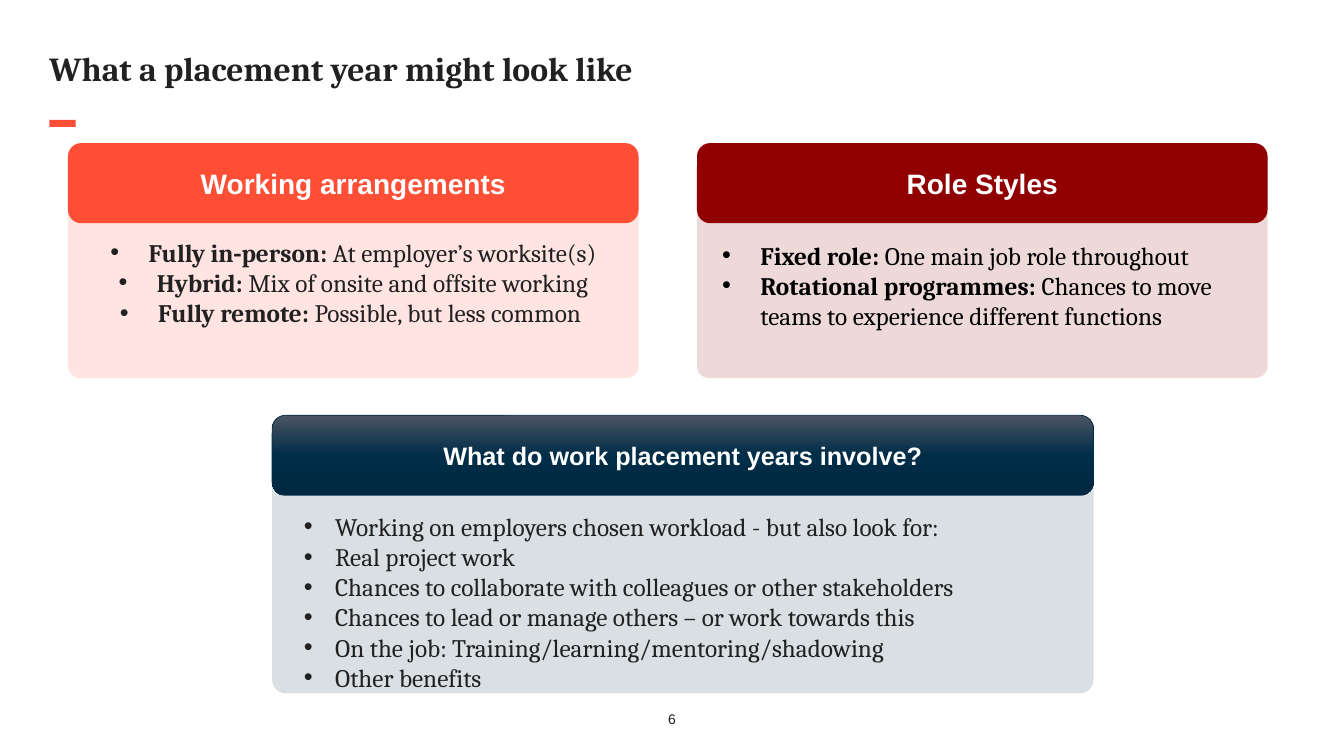
from dataclasses import dataclass

from lxml import etree
from pptx import Presentation
from pptx.dml.color import RGBColor
from pptx.enum.shapes import MSO_SHAPE
from pptx.enum.text import MSO_ANCHOR, MSO_AUTO_SIZE, PP_ALIGN
from pptx.oxml.ns import qn
from pptx.util import Inches, Pt

RECTANGLE, ROUNDED = MSO_SHAPE.RECTANGLE, MSO_SHAPE.ROUNDED_RECTANGLE
LEFT, CENTER = PP_ALIGN.LEFT, PP_ALIGN.CENTER
TOP, MIDDLE = MSO_ANCHOR.TOP, MSO_ANCHOR.MIDDLE
GROW = MSO_AUTO_SIZE.SHAPE_TO_FIT_TEXT


@dataclass(frozen=True)
class Theme:
    ink: str = "212121"
    black: str = "000000"
    white: str = "FFFFFF"
    coral: str = "FF4E36"
    maroon: str = "910000"
    navy: str = "032C45"
    navy_gradient: tuple = ((0, "4B5462"), (50, "002D48"), (100, "002840"))
    tint: int = 15
    serif: str = "Cambria"
    sans: str = "Arial"
    title: int = 24
    heading: int = 20
    body: int = 18
    small: int = 10


THEME = Theme()

# Content: each item is (bold lead, plain text); lengths are percent of the slide
TITLE = "What a placement year might look like"
PAGE_NUMBER = "6"
TITLE_AREA = (3.68, 2.27, 92.78, 14.27)
ACCENT_AREA = (3.68, 15.87, 1.95, 0.93)
PAGE_AREA = (46.43, 93.33, 7.13, 3.47)
HEADER_HEIGHT = 10.6
CARDS = [
    {
        "heading": "Working arrangements", "size": THEME.heading,
        "color": THEME.coral, "ink": THEME.ink, "gradient": None,
        "area": (5.06, 18.93, 42.45, 31.07),
        "side": 1.01, "gap": 1.14, "text_height": 17.47,
        "indent": 0.38, "align": CENTER,
        "items": [
            ("Fully in‑person: ", "At employer’s worksite(s)"),
            ("Hybrid: ", "Mix of onsite and offsite working"),
            ("Fully remote: ", "Possible, but less common "),
        ],
    },
    {
        "heading": "Role Styles", "size": THEME.heading,
        "color": THEME.maroon, "ink": THEME.black, "gradient": None,
        "area": (51.86, 18.93, 42.45, 31.07),
        "side": 1.13, "gap": 1.54, "text_height": 17.47,
        "indent": 0.38, "align": LEFT,
        "items": [
            ("Fixed role: ", "One main job role throughout"),
            ("Rotational programmes: ",
             "Chances to move teams to experience different functions"),
        ],
    },
    {
        "heading": "What do work placement years involve?", "size": THEME.body,
        "color": THEME.navy, "ink": THEME.ink, "gradient": THEME.navy_gradient,
        "area": (20.25, 54.93, 61.12, 36.8),
        "side": 1.63, "gap": 1.4, "text_height": 25.6,
        "indent": 0.31, "align": LEFT,
        "items": [
            ("", "Working on employers chosen workload - but also look for:"),
            ("", "Real project work"),
            ("", "Chances to collaborate with colleagues or other stakeholders"),
            ("", "Chances to lead or manage others – or work towards this"),
            ("", "On the job: Training/learning/mentoring/shadowing"),
            ("", "Other benefits"),
        ],
    },
]

presentation = Presentation()
presentation.slide_width, presentation.slide_height = Inches(13.33), Inches(7.5)
slide = presentation.slides.add_slide(presentation.slide_layouts[6])


def place(area):
    """Turn percent of the slide into lengths."""
    sides = (presentation.slide_width, presentation.slide_height) * 2
    return [int(side * share / 100) for side, share in zip(sides, area)]


def add_block(preset, area, color, alpha=None, radius=None):
    shape = slide.shapes.add_shape(preset, *place(area))
    shape.shadow.inherit = False
    shape.line.fill.background()
    shape.fill.solid()
    shape.fill.fore_color.rgb = RGBColor.from_string(color)
    if alpha is not None:
        color_element = shape.fill._xPr.find(".//" + qn("a:srgbClr"))
        etree.SubElement(color_element, qn("a:alpha"), val=str(alpha * 1000))
    if radius is not None:
        shape.adjustments[0] = radius
    return shape


def add_gradient(shape, stops):
    """Replace the solid fill with a top-to-bottom gradient."""
    solid = shape._element.spPr.find(qn("a:solidFill"))
    gradient = etree.Element(qn("a:gradFill"), rotWithShape="1")
    stop_list = etree.SubElement(gradient, qn("a:gsLst"))
    for position, color in stops:
        stop = etree.SubElement(stop_list, qn("a:gs"), pos=str(position * 1000))
        etree.SubElement(stop, qn("a:srgbClr"), val=color)
    etree.SubElement(gradient, qn("a:lin"), ang=str(90 * 60000), scaled="0")
    solid.getparent().replace(solid, gradient)


def add_bullet(paragraph, indent):
    properties = paragraph._p.get_or_add_pPr()
    properties.set("marL", str(Inches(indent)))
    properties.set("indent", str(-Inches(indent)))
    etree.SubElement(properties, qn("a:buFont"), typeface=THEME.sans)
    etree.SubElement(properties, qn("a:buChar"), char="•")


def write(shape, lines, font, size, color, align=LEFT, anchor=MIDDLE,
          indent=None, inset=None, spacing=None):
    """Write lines of (bold text, plain text) into a shape."""
    frame = shape.text_frame
    frame.word_wrap = True
    frame.vertical_anchor = anchor
    if inset is not None:
        for side in ("left", "top", "right", "bottom"):
            setattr(frame, f"margin_{side}", inset)
    for number, line in enumerate(lines):
        paragraph = frame.add_paragraph() if number else frame.paragraphs[0]
        paragraph.alignment = align
        if spacing is not None:
            paragraph.line_spacing = spacing
        if indent is not None:
            add_bullet(paragraph, indent)
        for text, bold in zip(line, (True, False)):
            if not text:
                continue
            run = paragraph.add_run()
            run.text = text
            run.font.color.rgb = RGBColor.from_string(color)
            formats = {"name": font, "size": Pt(size), "bold": bold}
            for name, value in formats.items():
                setattr(run.font, name, value)


def add_card(card):
    left, top, width, height = card["area"]
    add_block(ROUNDED, card["area"], card["color"], THEME.tint, 0.05)

    header = add_block(ROUNDED, (left, top, width, HEADER_HEIGHT), card["color"])
    if card["gradient"]:
        add_gradient(header, card["gradient"])
        header.line.color.rgb = RGBColor.from_string(card["color"])
        header.line.width = Pt(0.5)
    write(header, [(card["heading"], "")], THEME.sans, card["size"],
          THEME.white, CENTER)

    text_area = (left + card["side"], top + HEADER_HEIGHT + card["gap"],
                 width - 2 * card["side"], card["text_height"])
    box = slide.shapes.add_textbox(*place(text_area))
    write(box, card["items"], THEME.serif, THEME.body, card["ink"],
          card["align"], TOP, card["indent"])
    box.text_frame.auto_size = GROW


# Title, accent and page number
add_block(RECTANGLE, ACCENT_AREA, THEME.coral)
title = slide.shapes.add_textbox(*place(TITLE_AREA))
write(title, [(TITLE, "")], THEME.serif, THEME.title, THEME.ink,
      inset=0, spacing=0.9)
page = slide.shapes.add_textbox(*place(PAGE_AREA))
write(page, [("", PAGE_NUMBER)], THEME.sans, THEME.small, THEME.ink,
      CENTER, inset=0)

# Cards
for card in CARDS:
    add_card(card)

presentation.save("out.pptx")
